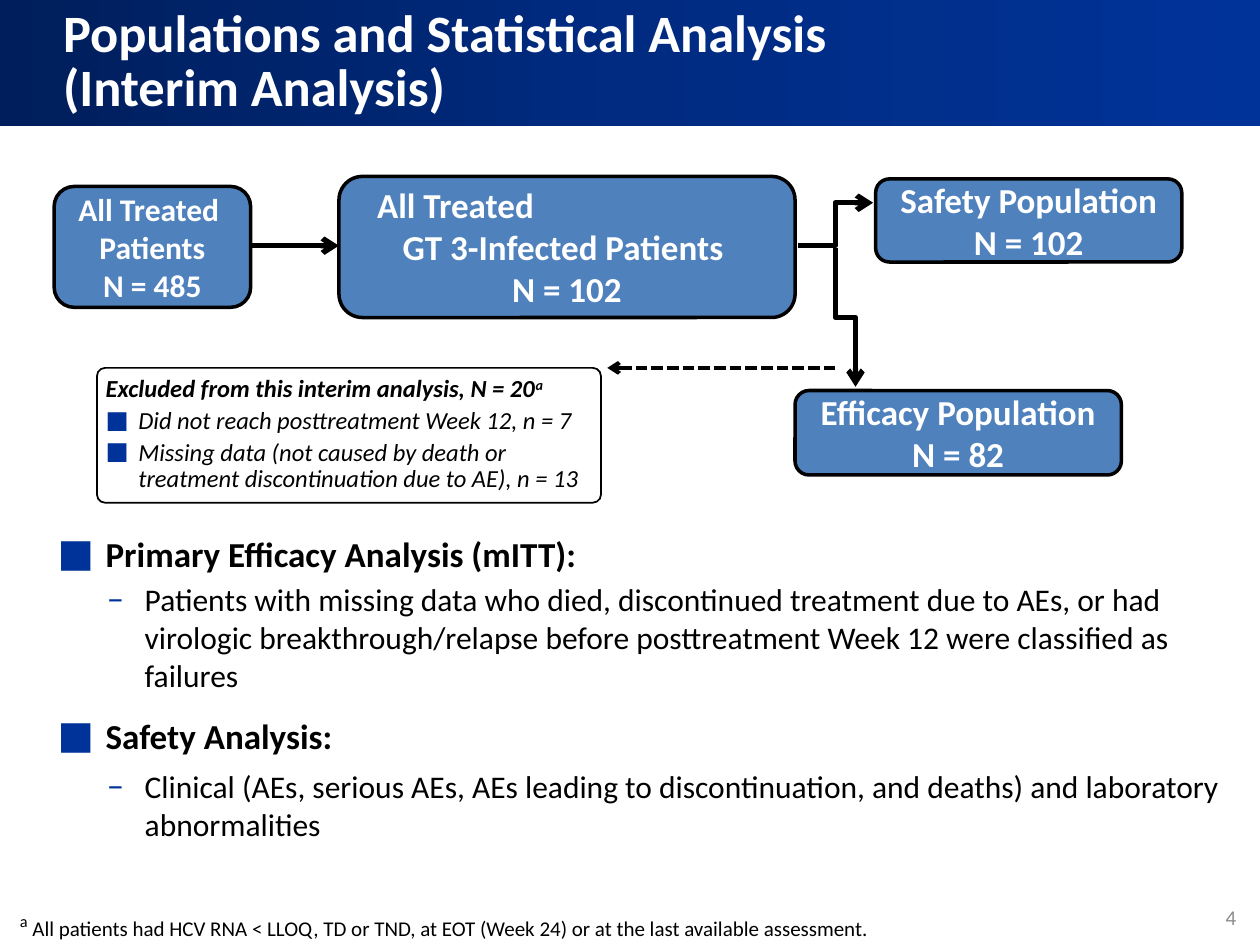
from copy import deepcopy

from lxml import etree
from pptx import Presentation
from pptx.dml.color import RGBColor
from pptx.enum.dml import MSO_LINE
from pptx.enum.shapes import MSO_CONNECTOR, MSO_SHAPE
from pptx.enum.text import MSO_ANCHOR, MSO_AUTO_SIZE, PP_ALIGN
from pptx.oxml.ns import qn
from pptx.util import Inches, Pt

COLORS = {"navy": "001E5B", "mid": "002B81", "blue": "003399", "box": "4F81BD",
          "black": "000000", "white": "FFFFFF", "gray": "8C8C8C"}
CENTER = {"alignment": PP_ALIGN.CENTER}


def color(name):
    return RGBColor.from_string(COLORS[name])


def apply(target, values):
    for name, value in values.items():
        setattr(target, name, value)


class Deck:
    font = "Calibri"

    def __init__(self, slide):
        self.slide = slide
        self.shapes = slide.shapes

    def runs(self, para, parts, size, ink, style):
        for part in parts:
            if part == "\n":
                para.add_line_break()
                continue
            run = para.add_run()
            run.text = part.removeprefix("^")
            apply(run.font, {"name": self.font, "size": Pt(size), **style})
            run.font.color.rgb = color(ink)
            if part.startswith("^"):
                run._r.get_or_add_rPr().set("baseline", "30000")

    def indent(self, para, left, hang=0, mark=None, scale=100):
        props = para._p.get_or_add_pPr()
        props.set("marL", str(Inches(left)))
        props.set("indent", str(-Inches(hang)))
        if mark:
            tint = etree.SubElement(props, qn("a:buClr"))
            etree.SubElement(tint, qn("a:srgbClr"), val=COLORS["blue"])
            etree.SubElement(props, qn("a:buSzPct"), val=str(scale * 1000))
            etree.SubElement(props, qn("a:buFont"), typeface=self.font)
            etree.SubElement(props, qn("a:buChar"), char=mark)

    def words(self, shape, paras, size, ink="black", frame=None):
        body = shape.text_frame
        apply(body, {"word_wrap": True, "auto_size": MSO_AUTO_SIZE.NONE, **(frame or {})})
        for i, (parts, layout, style, inset) in enumerate(paras):
            para = body.add_paragraph() if i else body.paragraphs[0]
            apply(para, layout)
            if inset:
                self.indent(para, *inset)
            look = dict(style)
            self.runs(para, parts, look.pop("pts", size), ink, look)

    def title(self, parts):
        shape = self.shapes.title
        self.place(shape, 0, 0, 10, 1.01)
        layout = {"alignment": PP_ALIGN.LEFT, "line_spacing": 0.85}
        frame = {"margin_left": Inches(0.5), "vertical_anchor": MSO_ANCHOR.MIDDLE}
        self.words(shape, [(parts, layout, {"bold": True}, None)], 30, "white", frame)

    def place(self, shape, *spot):
        apply(shape, dict(zip(("left", "top", "width", "height"), map(Inches, spot))))

    def banner(self):
        shape = self.shape(MSO_SHAPE.RECTANGLE, (0, 0, 10, 1))
        shape.line.fill.background()
        shape.fill.gradient()
        shape.fill.gradient_angle = 0
        stops = shape.element.spPr.find(".//" + qn("a:gsLst"))
        stops.insert(1, deepcopy(stops[0]))
        for stop, place, name in zip(shape.fill.gradient_stops, (0, 0.5, 1),
                                     ("navy", "mid", "blue")):
            stop.position = place
            stop.color.rgb = color(name)
        self.shapes._spTree.insert(2, shape.element)

    def shape(self, kind, spot):
        shape = self.shapes.add_shape(kind, *map(Inches, spot))
        shape.shadow.inherit = False
        return shape

    def box(self, spot, paras, size=20, fill="box", ink="white", width=2, bend=None, frame=None):
        shape = self.shape(MSO_SHAPE.ROUNDED_RECTANGLE, spot)
        if fill:
            shape.fill.solid()
            shape.fill.fore_color.rgb = color(fill)
        else:
            shape.fill.background()
        shape.line.color.rgb = color("black")
        shape.line.width = Pt(width)
        if bend:
            shape.adjustments[0] = bend
        self.words(shape, paras, size, ink, {"vertical_anchor": MSO_ANCHOR.MIDDLE, **(frame or {})})

    def text(self, spot, paras, size, ink="black", frame=None):
        shape = self.shapes.add_textbox(*map(Inches, spot))
        self.words(shape, paras, size, ink, frame)
        return shape

    def arrow(self, start, end, kind=MSO_CONNECTOR.STRAIGHT, width=3, dash=None, turn=0):
        link = self.shapes.add_connector(kind, *map(Inches, start + end))
        link.line.color.rgb = color("black")
        link.line.width = Pt(width)
        if dash:
            link.line.dash_style = dash
        props = link._element.spPr
        if turn:
            props.find(qn("a:xfrm")).set("rot", str(turn * 60000))
        etree.SubElement(props.find(qn("a:ln")), qn("a:tailEnd"), type="arrow")
        etree.SubElement(props, qn("a:effectLst"))


def labels(*lines):
    return [([line], CENTER, {"bold": True}, None) for line in lines]


def main():
    prs = Presentation()
    prs.slide_width, prs.slide_height = Inches(10), Inches(7.5)
    deck = Deck(prs.slides.add_slide(prs.slide_layouts[5]))

    deck.banner()
    deck.title(["Populations and Statistical Analysis", "\n", "(Interim Analysis)"])
    deck.text((9.51, 7.13, 0.4, 0.3), [(["4"], {"alignment": PP_ALIGN.RIGHT}, {}, None)],
              12, "gray", {"vertical_anchor": MSO_ANCHOR.MIDDLE})

    bold = {"bold": True}
    infected = [(["All Treated"], {"alignment": PP_ALIGN.LEFT}, bold, (0.15,))]
    deck.box((2.69, 1.4, 3.62, 1.12), infected + labels("GT 3-Infected Patients ", "N = 102"))
    deck.box((6.31, 3.1, 2.59, 0.67), labels("Efficacy Population", "N = 82"))
    deck.box((6.95, 1.42, 2.43, 0.66), labels("Safety Population", "N = 102"))
    deck.box((0.43, 1.48, 1.56, 0.96), labels("All Treated ", "Patients", "N = 485"), 18)

    tight = {"alignment": PP_ALIGN.LEFT, "line_spacing": 0.9, "space_after": Pt(3)}
    slant = {"italic": True}
    square = (0.26, 0.26, "■")
    edges = {f"margin_{side}": Inches(0.05) for side in ("left", "right", "top", "bottom")}
    deck.box((0.77, 2.92, 4, 1.07), [
        (["Excluded from this interim analysis, N = 20", "^a"], tight, {**bold, **slant}, None),
        (["Did not reach posttreatment Week 12, n = 7"], tight, slant, square),
        (["Missing data (not caused by death or treatment discontinuation due to AE), n = 13"],
         tight, slant, square),
    ], 14, None, "black", 1, 0.06, {**edges, "vertical_anchor": MSO_ANCHOR.TOP})

    deck.arrow((1.99, 1.95), (2.69, 1.95))
    deck.arrow((6.63, 2.92), (4.82, 2.92), width=2.25, dash=MSO_LINE.SQUARE_DOT)
    deck.arrow((6.33, 1.95), (6.93, 1.61), MSO_CONNECTOR.ELBOW)
    deck.arrow((7.26, 2.44), (6.16, 2.6), MSO_CONNECTOR.ELBOW, turn=270)

    head, item = (0.38, 0.38, "■", 110), (0.69, 0.3, "–", 110)
    points = [
        ("Primary Efficacy Analysis (mITT):", 3, head),
        ("Patients with missing data who died, discontinued treatment due to AEs, or had "
         "virologic breakthrough/relapse before posttreatment Week 12 were classified as "
         "failures", 12, item),
        ("Safety Analysis:", 6, head),
        ("Clinical (AEs, serious AEs, AEs leading to discontinuation, and deaths) and "
         "laboratory abnormalities", 18, item),
    ]
    deck.text((0.36, 4.18, 9.55, 2.6), [
        ([line], {"space_after": Pt(gap)},
         {"bold": mark is head, "pts": 20 if mark is head else 18}, mark)
        for line, gap, mark in points], 18)

    note = ("All patients had HCV RNA < LLOQ, TD or TND, at EOT (Week 24) "
            "or at the last available assessment.")
    foot = deck.text((0.06, 7.19, 9.65, 0.28),
                     [(["^a", " " + note], {"line_spacing": 0.9}, {}, (0.12, 0.12))], 12)
    foot.text_frame.paragraphs[0].runs[0].font.size = Pt(16)

    prs.save("out.pptx")


if __name__ == "__main__":
    main()
